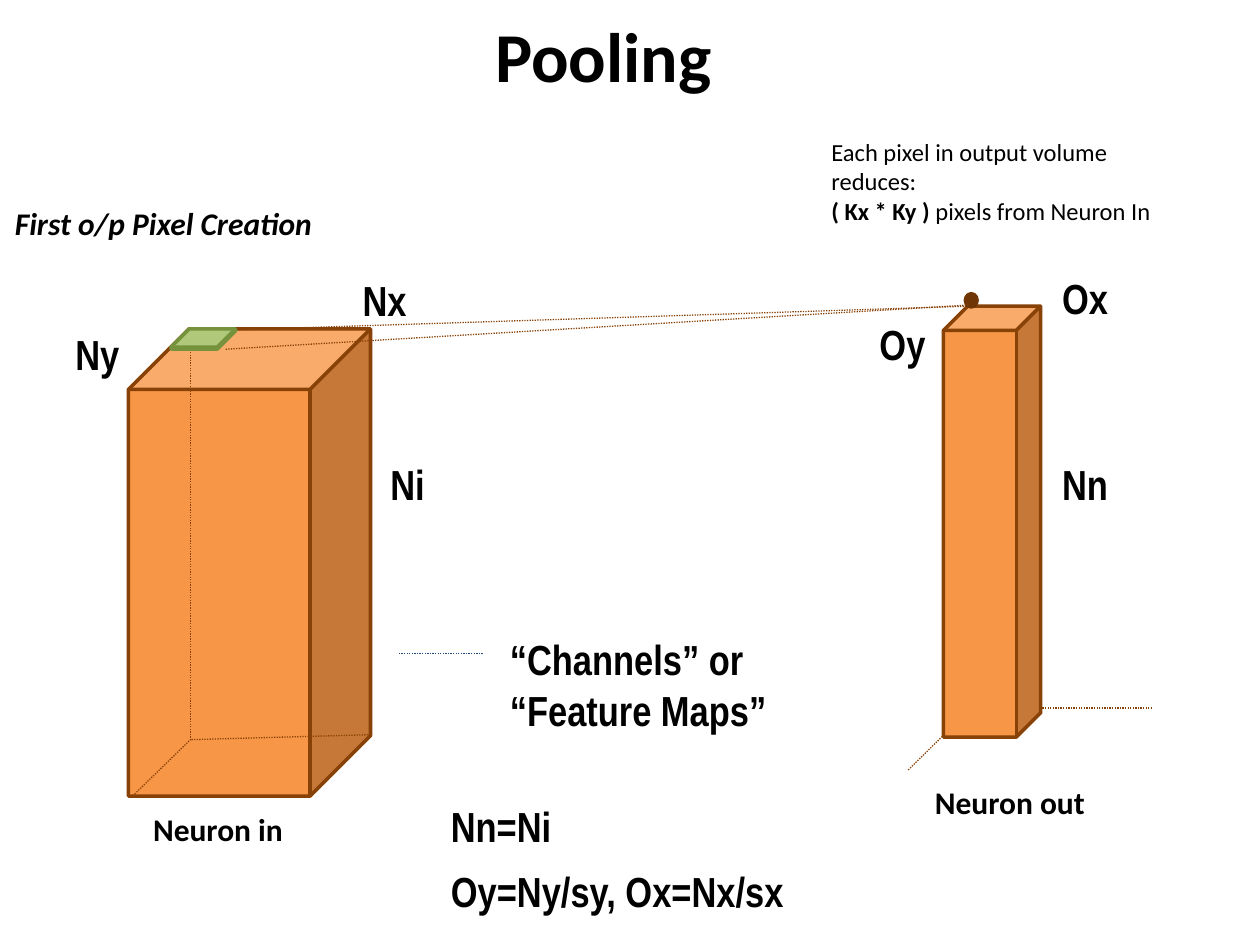
"""Build the Pooling slide: input and output neuron volumes with labels."""
from lxml import etree
from pptx import Presentation
from pptx import util as u
from pptx.dml.color import RGBColor
from pptx.enum import dml, shapes, text
from pptx.oxml.ns import qn

BLACK = RGBColor(0x00, 0x00, 0x00)
ORANGE = RGBColor(0xF7, 0x96, 0x46)
BROWN = RGBColor(0x88, 0x41, 0x06)
DARK_BROWN = RGBColor(0x6F, 0x35, 0x05)
GREEN = RGBColor(0x9B, 0xBB, 0x59)
DARK_GREEN = RGBColor(0x76, 0x92, 0x3C)
BLUE = RGBColor(0x1F, 0x49, 0x7D)
CUBE = shapes.MSO_SHAPE.CUBE
DOT = shapes.MSO_SHAPE.FLOWCHART_CONNECTOR
LEFT, CENTER = text.PP_ALIGN.LEFT, text.PP_ALIGN.CENTER

prs = Presentation()
prs.slide_width, prs.slide_height = u.Cm(25.4), u.Cm(19.05)
s = prs.slides.add_slide(prs.slide_layouts[6])


def add_lines(lines):
    for x1, y1, x2, y2, color in lines:
        ln = s.shapes.add_connector(shapes.MSO_CONNECTOR.STRAIGHT,
                                    u.Cm(x1), u.Cm(y1), u.Cm(x2), u.Cm(y2))
        ln.line.color.rgb = color
        for name, value in {"width": u.Pt(0.75),
                            "dash_style": dml.MSO_LINE.ROUND_DOT}.items():
            setattr(ln.line, name, value)
        etree.SubElement(ln._element.spPr, qn("a:effectLst"))


def add_text(box, paragraphs, align, wrap, inset, font):
    sp = s.shapes.add_textbox(*[u.Cm(v) for v in box])
    tf = sp.text_frame
    frame = {"word_wrap": wrap, "margin_top": u.Cm(inset), "margin_bottom": u.Cm(inset),
             "margin_left": u.Cm(0.25), "margin_right": u.Cm(0.25),
             "auto_size": text.MSO_AUTO_SIZE.NONE if wrap else text.MSO_AUTO_SIZE.SHAPE_TO_FIT_TEXT}
    for name, value in frame.items():
        setattr(tf, name, value)
    for i, runs in enumerate(paragraphs):
        p = tf.paragraphs[0] if i == 0 else tf.add_paragraph()
        p.alignment = align
        for words, bold in runs:
            r = p.add_run()
            r.text = words
            for name, value in {**font, "bold": bold}.items():
                setattr(r.font, name, value)
            r.font.color.rgb = BLACK


volume_in = (CUBE, (2.59, 6.63, 4.88, 9.42), 0.25, ORANGE, BROWN, 2)
volume_out = (CUBE, (19.02, 6.17, 1.96, 8.69), 0.25, ORANGE, BROWN, 2)
pixel = (DOT, (19.48, 5.94, 0.2, 0.23), None, DARK_BROWN, DARK_BROWN, 3)
window = (CUBE, (3.45, 6.63, 1.3, 0.41), 0.9, GREEN, DARK_GREEN, 2)
for kind, box, depth, fill, line, width in (volume_in, volume_out, pixel, window):
    if kind == CUBE and box == volume_out[1]:
        add_lines([
            (3.84, 6.63, 3.84, 14.91, BROWN),
            (2.64, 16.08, 3.84, 14.91, BROWN),
            (3.86, 14.91, 7.49, 14.81, BROWN),
            (19.58, 6.07, 19.61, 14.27, BROWN),
            (18.31, 15.52, 19.58, 14.27, BROWN),
            (19.61, 14.27, 23.22, 14.27, BROWN),
            (4.75, 6.65, 19.58, 6.17, BROWN),
        ])
    sp = s.shapes.add_shape(kind, *[u.Cm(v) for v in box])
    sp.shadow.inherit = False
    if depth is not None:
        sp.adjustments[0] = depth
    sp.fill.solid()
    sp.fill.fore_color.rgb = fill
    sp.line.color.rgb = line
    sp.line.width = u.Pt(width)

add_lines([(4.55, 7.04, 19.51, 6.15, BROWN), (9.73, 13.18, 8.03, 13.18, BLUE)])

for box, paragraphs, align, size, italic in [
    ((2.41, 0, 19.51, 1.7), [[("Pooling", True)]], CENTER, 40, False),
    ((0.05, 3.86, 6.83, 1.55), [[("First o/p Pixel Creation", True)]], LEFT, 18, True),
    ((16.51, 2.51, 7.32, 2.11),
     [[("Each pixel in output volume reduces:", False)],
      [("( Kx * Ky ) ", True), ("pixels from Neuron In", False)]], LEFT, 14, False),
    ((2.59, 16.08, 3.61, 0.97), [[("Neuron in", True)]], CENTER, 18, False),
    ((18.57, 15.54, 3.58, 1.14), [[("Neuron out", True)]], CENTER, 18, False),
]:
    add_text(box, paragraphs, align, True, 0.25,
             {"name": "Calibri", "size": u.Pt(size), "italic": italic})

for x, y, w, h, *lines in [
    (1.27, 6.5, 1.42, 1.27, "Ny"),
    (7.06, 5.41, 1.42, 1.27, "Nx"),
    (7.62, 9.12, 1.22, 1.27, "Ni"),
    (17.48, 6.3, 1.45, 1.27, "Oy"),
    (21.16, 5.36, 1.45, 1.27, "Ox"),
    (21.16, 9.12, 1.45, 1.27, "Nn"),
    (8.84, 16, 2.57, 1.27, "Nn=Ni"),
    (8.84, 17.32, 7.32, 1.27, "Oy=Ny/sy, Ox=Nx/sx"),
    (10.03, 12.65, 5.72, 2.31, "“Channels” or", "“Feature Maps”"),
]:
    add_text((x, y, w, h), [[(words, True)] for words in lines], LEFT, False, 0.13,
             {"name": "Arial Narrow", "size": u.Pt(24)})

prs.save("out.pptx")
